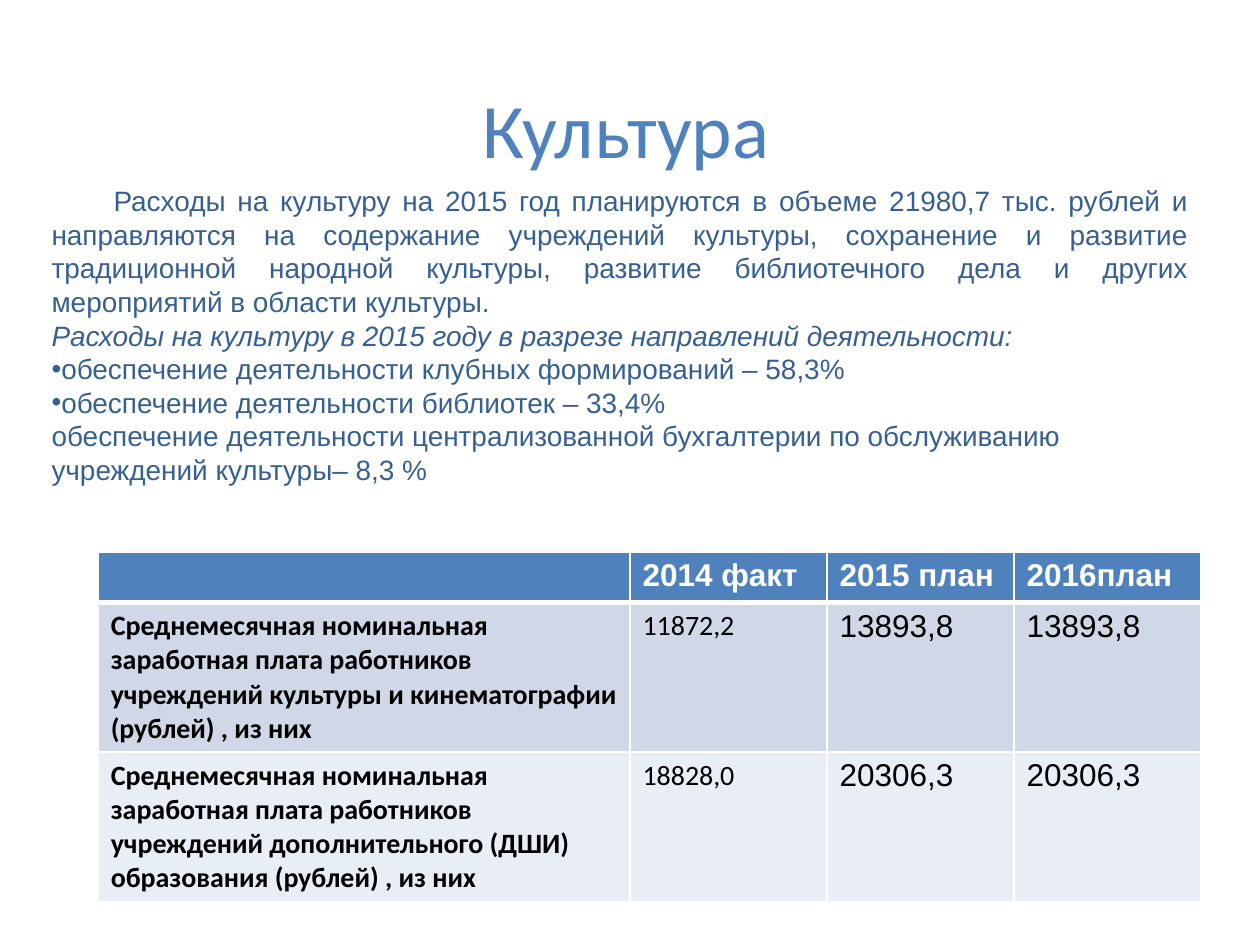
from lxml.etree import SubElement
from pptx import Presentation
from pptx.dml.color import RGBColor
from pptx.enum.text import MSO_ANCHOR, PP_ALIGN
from pptx.oxml.ns import qn
from pptx.util import Cm, Pt

BLUE, NAVY, WHITE, BLACK = "4F81BD", "376092", "FFFFFF", "000000"
TITLE = "Культура"
BODY = [
    ("Расходы на культуру на 2015 год планируются в объеме 21980,7 тыс. рублей и направляются на "
     "содержание учреждений культуры, сохранение и развитие традиционной народной культуры, развитие "
     "библиотечного дела и других мероприятий в области культуры.", "indent"),
    ("Расходы на культуру в 2015 году в разрезе направлений деятельности:", "italic"),
    ("обеспечение деятельности клубных формирований – 58,3%", "bullet"),
    ("обеспечение деятельности библиотек – 33,4%", "bullet"),
    ("обеспечение деятельности централизованной бухгалтерии по обслуживанию "
     "учреждений культуры– 8,3 %", "left"),
]
ROWS = [
    ("", "2014 факт", "2015 план", "2016план"),
    ("Среднемесячная номинальная заработная плата работников учреждений культуры и кинематографии "
     "(рублей) , из них", "11872,2", "13893,8", "13893,8"),
    ("Среднемесячная номинальная заработная плата работников учреждений дополнительного (ДШИ) "
     "образования (рублей) , из них", "18828,0", "20306,3", "20306,3"),
]
ROW_FILLS = [BLUE, "D0D8E8", "E9EDF4"]
COL_WIDTHS = [10.72, 3.97, 3.77, 3.77]
ROW_HEIGHTS = [1.02, 3.01, 3.01]


def rgb(value):
    return RGBColor.from_string(value)


def add_run(p, text, size, font, color, bold=False, italic=False):
    r = p.add_run()
    r.text = text
    r.font.size = Pt(size)
    r.font.name = font
    r.font.color.rgb = rgb(color)
    r.font.bold = bold
    r.font.italic = italic


def add_box(s, left, top, width, height, anchor):
    tf = s.shapes.add_textbox(Cm(left), Cm(top), Cm(width), Cm(height)).text_frame
    tf.word_wrap = True
    tf.vertical_anchor = anchor
    return tf


def add_border(cell, side, width):
    tc_pr = cell._tc.get_or_add_tcPr()
    ln = SubElement(tc_pr, qn(f"a:ln{side}"), w=str(Pt(width)))
    fill = SubElement(ln, qn("a:solidFill"))
    SubElement(fill, qn("a:srgbClr"), val=WHITE)


def add_body(s):
    tf = add_box(s, 0.79, 3.58, 23.42, 7.19, MSO_ANCHOR.TOP)
    for i, (text, style) in enumerate(BODY):
        p = tf.paragraphs[0] if i == 0 else tf.add_paragraph()
        p.alignment = PP_ALIGN.LEFT if style == "left" else PP_ALIGN.JUSTIFY
        p_pr = p._p.get_or_add_pPr()
        if style == "indent":
            p_pr.set("indent", str(Cm(1.25)))
        if style == "bullet":
            SubElement(p_pr, qn("a:buFont"), typeface="Arial")
            SubElement(p_pr, qn("a:buChar"), char="•")
        add_run(p, text, 16, "Arial", NAVY, italic=style == "italic")


def add_wages(s):
    table = s.shapes.add_table(len(ROWS), len(COL_WIDTHS), Cm(1.98), Cm(11.13),
                               Cm(sum(COL_WIDTHS)), Cm(sum(ROW_HEIGHTS))).table
    for column, width in zip(table.columns, COL_WIDTHS):
        column.width = Cm(width)
    for i, (row, height) in enumerate(zip(table.rows, ROW_HEIGHTS)):
        row.height = Cm(height)
        for j, (cell, text) in enumerate(zip(row.cells, ROWS[i])):
            for side in "LRTB":
                header_edge = (i, side) in ((0, "B"), (1, "T"))
                add_border(cell, side, 3 if header_edge else 1)
            cell.fill.solid()
            cell.fill.fore_color.rgb = rgb(ROW_FILLS[i])
            if text:
                size, font = (16, "Calibri") if i and j < 2 else (18, "Arial")
                add_run(cell.text_frame.paragraphs[0], text, size, font,
                        BLACK if i else WHITE, bold=i == 0 or j == 0)


def main():
    prs = Presentation()
    prs.slide_width, prs.slide_height = Cm(25.4), Cm(19.05)
    s = prs.slides.add_slide(prs.slide_layouts[6])
    p = add_box(s, 1.19, 0.99, 22.86, 3.18, MSO_ANCHOR.MIDDLE).paragraphs[0]
    p.alignment = PP_ALIGN.CENTER
    add_run(p, TITLE, 44, "Calibri", BLUE)
    add_wages(s)
    add_body(s)
    prs.save("out.pptx")


if __name__ == "__main__":
    main()
